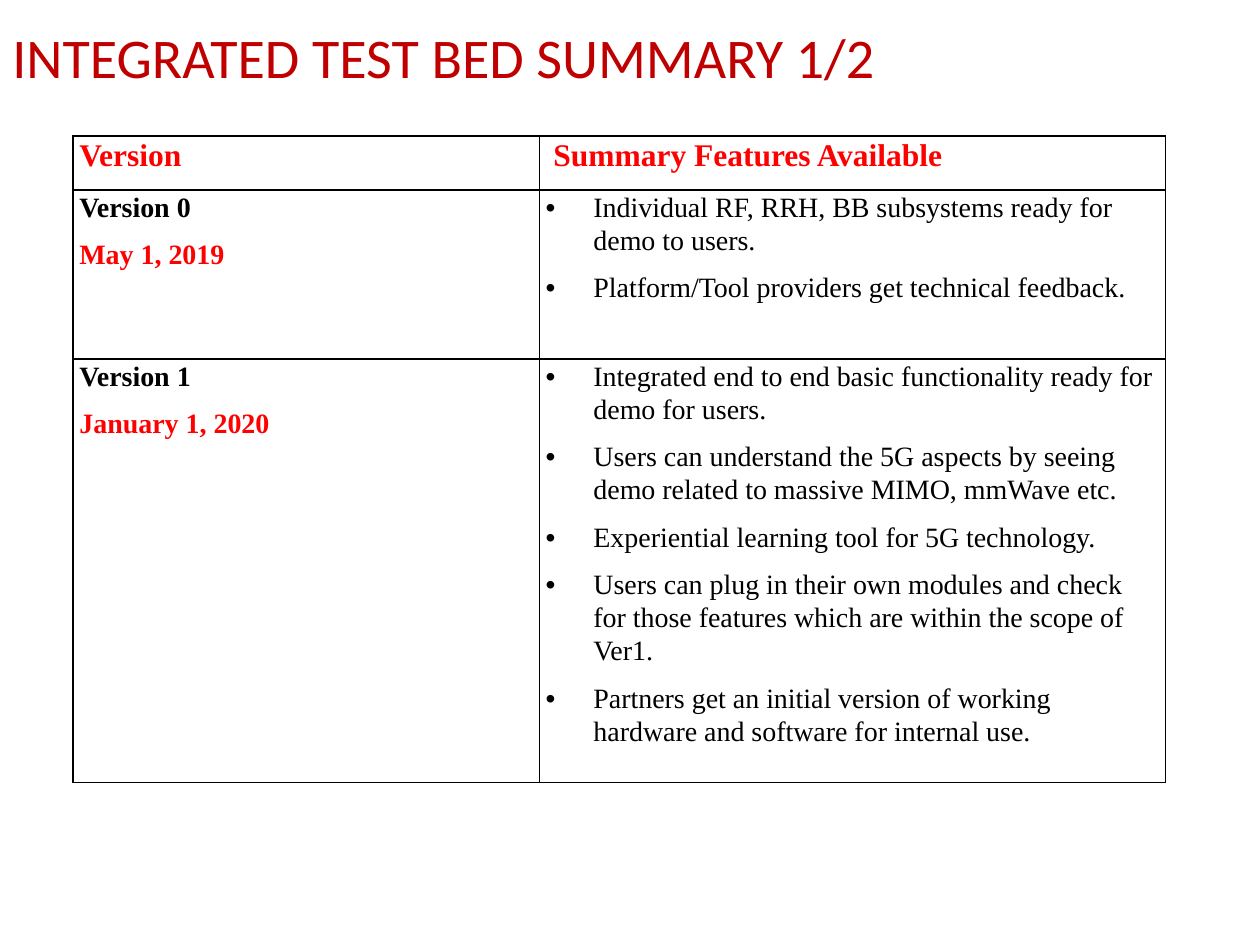
from lxml.etree import SubElement as Sub
from pptx import Presentation
from pptx.dml.color import RGBColor as RGB
from pptx.enum.text import MSO_ANCHOR as Anchor
from pptx.oxml.ns import qn
from pptx.util import Inches, Pt

HUES = {"title": "C00000", "red": "FF0000", "black": "000000"}
SERIF = "Times New Roman"


def write(frame, text, first=False, font=SERIF, size=16, hue="black",
          bold=False, dot=False, line=1.07, after=8):
    para = frame.paragraphs[0] if first else frame.add_paragraph()
    para.line_spacing = line
    para.space_after = Pt(after)
    run = para.add_run()
    run.text = text
    run.font.name = font
    run.font.size = Pt(size)
    run.font.bold = bold
    run.font.color.rgb = RGB.from_string(HUES[hue])
    if dot:
        props = para._p.get_or_add_pPr()
        props.set("marL", str(Inches(0.38)))
        props.set("indent", str(-Inches(0.38)))
        Sub(props, qn("a:buFont"), typeface="Arial")
        Sub(props, qn("a:buChar"), char="•")


def edge(cell):
    props = cell._tc.get_or_add_tcPr()
    for at, side in enumerate(("lnL", "lnR", "lnT", "lnB")):
        line = Sub(props, qn("a:" + side), w=str(Pt(1)))
        props.insert(at, line)
        fill = Sub(line, qn("a:solidFill"))
        Sub(fill, qn("a:srgbClr"), val=HUES["black"])


deck = Presentation()
deck.slide_width, deck.slide_height = Inches(10), Inches(7.5)
slide = deck.slides.add_slide(deck.slide_layouts[6])

# Title
box = slide.shapes.add_textbox(0, 0, Inches(10), Inches(0.89))
frame = box.text_frame
frame.word_wrap = True
frame.vertical_anchor = Anchor.MIDDLE
write(frame, "INTEGRATED TEST BED SUMMARY 1/2", first=True, font="Calibri",
      size=32, hue="title", line=1.0, after=0)

# Table grid
cols, rows = (3.7, 4.97), (0.43, 1.34, 3.36)
table = slide.shapes.add_table(
    len(rows), len(cols), Inches(0.58), Inches(1.08),
    Inches(sum(cols)), Inches(sum(rows))).table
for col, width in zip(table.columns, cols):
    col.width = Inches(width)
for row, height in zip(table.rows, rows):
    row.height = Inches(height)
for cell in table.iter_cells():
    cell.margin_left = cell.margin_right = Inches(0.05)
    cell.margin_top = cell.margin_bottom = 0
    cell.fill.background()
    edge(cell)

# Header row
for col, text in enumerate(("Version", " Summary Features Available")):
    write(table.cell(0, col).text_frame, text, first=True, size=18,
          hue="red", bold=True)

# Version rows
plan = [
    ("Version 0", "May 1, 2019", [
        "Individual RF, RRH, BB subsystems ready for demo to users.",
        "Platform/Tool providers get technical feedback."]),
    ("Version 1", "January 1, 2020", [
        "Integrated end to end basic functionality ready for demo for users.",
        "Users can understand the 5G aspects by seeing demo related to "
        "massive MIMO, mmWave etc.",
        "Experiential learning tool for 5G technology.",
        "Users can plug in their own modules and check for those features "
        "which are within the scope of Ver1.",
        "Partners get an initial version of working hardware and software "
        "for internal use."]),
]
for row, (name, date, items) in enumerate(plan, 1):
    left = table.cell(row, 0).text_frame
    write(left, name, first=True, bold=True)
    write(left, date, hue="red", bold=True)
    right = table.cell(row, 1).text_frame
    for at, item in enumerate(items):
        write(right, item, first=at == 0, dot=True)

deck.save("out.pptx")
